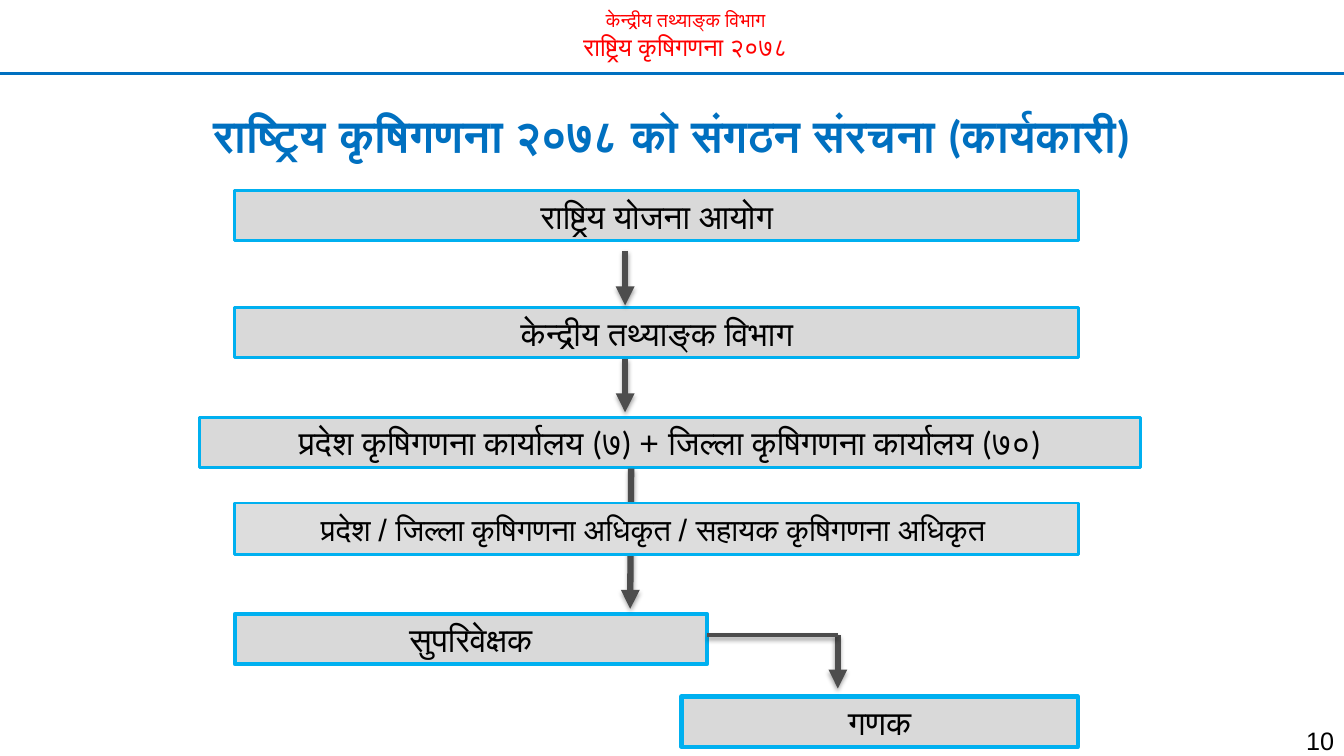
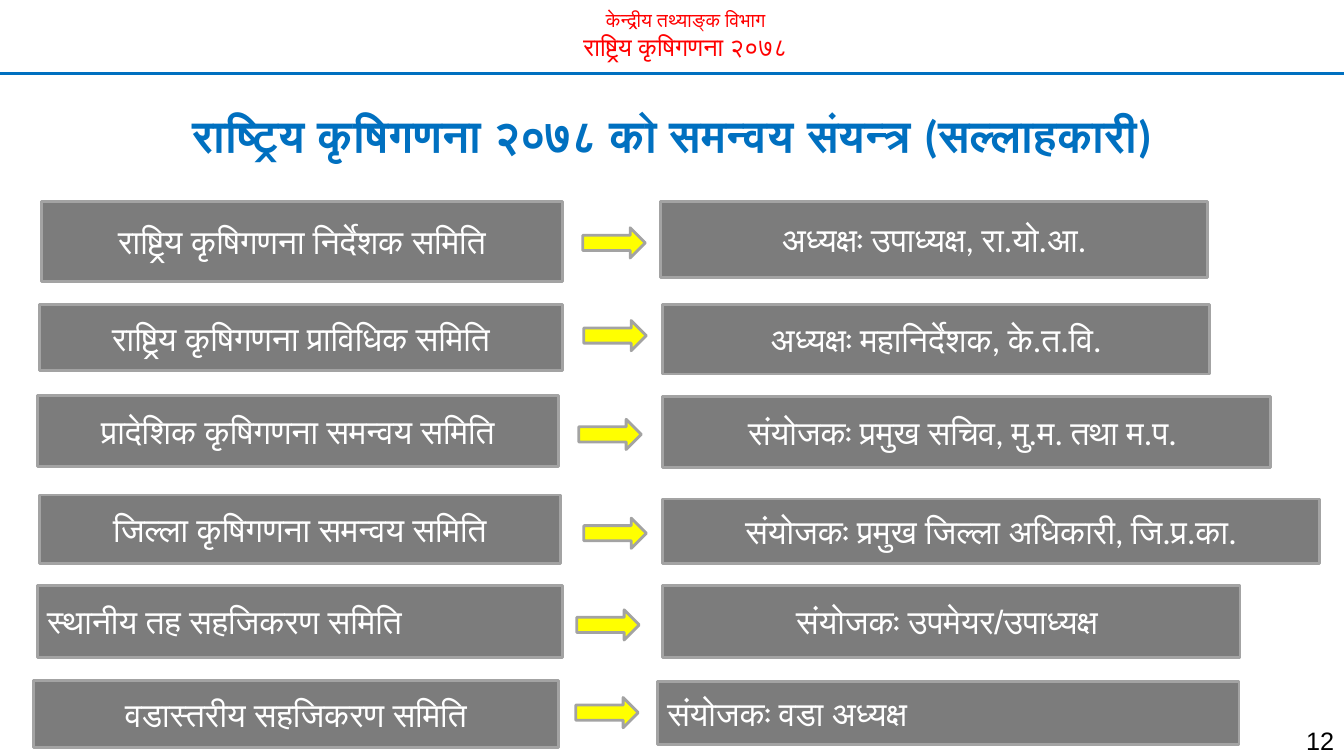
from lxml import etree
from pptx import Presentation
from pptx.dml.color import RGBColor
from pptx.enum.shapes import MSO_CONNECTOR, MSO_SHAPE
from pptx.enum.text import MSO_ANCHOR, PP_ALIGN
from pptx.oxml import parse_xml
from pptx.oxml.ns import nsdecls, qn
from pptx.util import Pt

EMU_PER_PX = 9144
WIDTH, HEIGHT = 1333, 750
RED, BLUE, SKY, BLACK, WHITE = "FF0000", "0070C0", "00B0F0", "000000", "FFFFFF"
LIGHT, PALE, DARK, GREY, EDGE, YELLOW = (
    "D9D9D9", "DDDDDD", "4D4D4D", "7C7C7C", "A3A3A3", "FFFF00")
LEFT, CENTER, RIGHT = PP_ALIGN.LEFT, PP_ALIGN.CENTER, PP_ALIGN.RIGHT

SHADOW = (f'<a:effectLst {nsdecls("a")}><a:outerShdw blurRad="40000" dist="23000" '
          'dir="5400000" rotWithShape="0"><a:srgbClr val="000000">'
          '<a:alpha val="35000"/></a:srgbClr></a:outerShdw></a:effectLst>')
NO_SHADOW = f'<a:effectLst {nsdecls("a")}/>'

# left box text, its place and alignment; arrow corner; right box text, place, alignment
COMMITTEES = [
    ("राष्ट्रिय कृषिगणना निर्देशक समिति", (41, 200, 517, 79), CENTER, (578, 226),
     "अध्यक्षः उपाध्यक्ष, रा.यो.आ.", (655, 200, 543, 75), CENTER),
    ("राष्ट्रिय कृषिगणना प्राविधिक समिति", (39, 302, 519, 66), CENTER, (579, 318),
     "अध्यक्षः महानिर्देशक, के.त.वि.", (657, 302, 543, 69), CENTER),
    ("प्रादेशिक कृषिगणना समन्वय समिति", (37, 392, 517, 71), CENTER, (574, 416),
     "संयोजकः प्रमुख सचिव, मु.म. तथा म.प. ", (657, 393, 603, 71), CENTER),
    ("जिल्ला कृषिगणना समन्वय समिति", (39, 491, 517, 68), CENTER, (579, 514),
     "संयोजकः प्रमुख जिल्ला अधिकारी, जि.प्र.का.", (657, 495, 652, 64), CENTER),
    ("स्थानीय तह सहजिकरण समिति", (37, 581, 521, 71), LEFT, (572, 605),
     [("संयोजकः ", "Calibri"), ("उपमेयर/उपाध्यक्ष ", "Arial")],
     (657, 581, 573, 71), CENTER),
    ("वडास्तरीय सहजिकरण समिति", (33, 675, 521, 67), CENTER, (571, 692),
     "संयोजकः वडा अध्यक्ष", (652, 676, 577, 63), LEFT),
]


def px(*values):
    return [value * EMU_PER_PX for value in values]


def rgb(color):
    return RGBColor.from_string(color)


def write(p, text, size, color, align=CENTER, font="Calibri", bold=False):
    """Fill a paragraph from a string or from (text, font) pairs."""
    runs = [(text, font)] if isinstance(text, str) else text
    p.alignment = align
    for part, name in runs:
        r = p.add_run()
        r.text = part
        r.font.name = name
        r.font.size = Pt(size)
        r.font.bold = bold
        r.font.color.rgb = rgb(color)


def add_text(slide, place):
    tf = slide.shapes.add_textbox(*px(*place)).text_frame
    tf.word_wrap = True
    return tf


def add_preset(slide, kind, place, fill, edge, weight):
    sp = slide.shapes.add_shape(kind, *px(*place))
    sp.shadow.inherit = False
    sp.fill.solid()
    sp.fill.fore_color.rgb = rgb(fill)
    sp.line.color.rgb = rgb(edge)
    sp.line.width = Pt(weight)
    return sp


def add_box(slide, text, place, fill, edge, weight, color=BLACK, size=24,
            align=CENTER, font="Calibri"):
    sp = add_preset(slide, MSO_SHAPE.RECTANGLE, place, fill, edge, weight)
    tf = sp.text_frame
    tf.word_wrap = True
    tf.vertical_anchor = MSO_ANCHOR.MIDDLE
    write(tf.paragraphs[0], text, size, color, align, font)


def add_line(slide, ends, color, weight, arrow=False, effect=SHADOW):
    line = slide.shapes.add_connector(MSO_CONNECTOR.STRAIGHT, *px(*ends))
    line.line.color.rgb = rgb(color)
    line.line.width = Pt(weight)
    if arrow:
        etree.SubElement(line.line._get_or_add_ln(), qn("a:tailEnd"), type="triangle")
    line._element.spPr.append(parse_xml(effect))


def add_frame(prs, title, number):
    """Add a slide with the shared header, rule, title and page number."""
    slide = prs.slides.add_slide(prs.slide_layouts[6])
    tf = add_text(slide, (125, 3, 1110, 64))
    write(tf.paragraphs[0], "केन्द्रीय तथ्याङ्क विभाग", 14, RED)
    write(tf.add_paragraph(), "राष्ट्रिय कृषिगणना २०७८", 18, RED)
    add_line(slide, (0, 73, WIDTH, 73), BLUE, 2, effect=NO_SHADOW)

    p = add_text(slide, (0, 75, WIDTH, 86)).paragraphs[0]
    p.line_spacing = 1.5
    write(p, title, 32, BLUE, bold=True)

    p = add_text(slide, (1230, 700, 103, 42)).paragraphs[0]
    p.line_spacing = 1.5
    write(p, number, 18, BLACK, RIGHT, "Arial")
    return slide


def build_structure(prs):
    slide = add_frame(prs, "राष्ट्रिय कृषिगणना २०७८ को संगठन संरचना (कार्यकारी)", "10")
    offices = [("प्रदेश कृषिगणना कार्यालय (७) ", "Calibri"), ("+ ", "Arial"),
               ("जिल्ला कृषिगणना कार्यालय (७०)", "Calibri")]
    for text, place, weight in [
        ("राष्ट्रिय योजना आयोग", (233, 189, 837, 50), 2.25),
        ("केन्द्रीय तथ्याङ्क विभाग", (233, 305, 837, 50), 2.25),
        (offices, (198, 414, 933, 50), 2.25),
        ("सुपरिवेक्षक", (233, 609, 468, 50), 3),
        ("गणक", (676, 691, 393, 50), 3),
    ]:
        add_box(slide, text, place, LIGHT, SKY, weight)

    for ends in [(620, 249, 620, 303), (620, 356, 620, 409),
                 (626, 465, 625, 604), (831, 630, 831, 683)]:
        add_line(slide, ends, DARK, 4.5, arrow=True)
    add_line(slide, (701, 630, 831, 630), DARK, 3)

    add_box(slide, "प्रदेश / जिल्ला कृषिगणना अधिकृत / सहायक कृषिगणना अधिकृत ",
            (233, 499, 837, 51), PALE, SKY, 2, size=22, font="Arial")


def build_committees(prs):
    slide = add_frame(prs, "राष्ट्रिय कृषिगणना २०७८ को समन्वय संयन्त्र (सल्लाहकारी)", "12")
    for body, body_place, body_align, corner, head, head_place, head_align in COMMITTEES:
        add_box(slide, body, body_place, GREY, EDGE, 2, WHITE, align=body_align)
        add_preset(slide, MSO_SHAPE.RIGHT_ARROW, (*corner, 62, 30), YELLOW, EDGE, 2)
        add_box(slide, head, head_place, GREY, EDGE, 2, WHITE, align=head_align)


def main():
    prs = Presentation()
    prs.slide_width, prs.slide_height = px(WIDTH, HEIGHT)
    build_structure(prs)
    build_committees(prs)
    prs.save("out.pptx")


if __name__ == "__main__":
    main()
